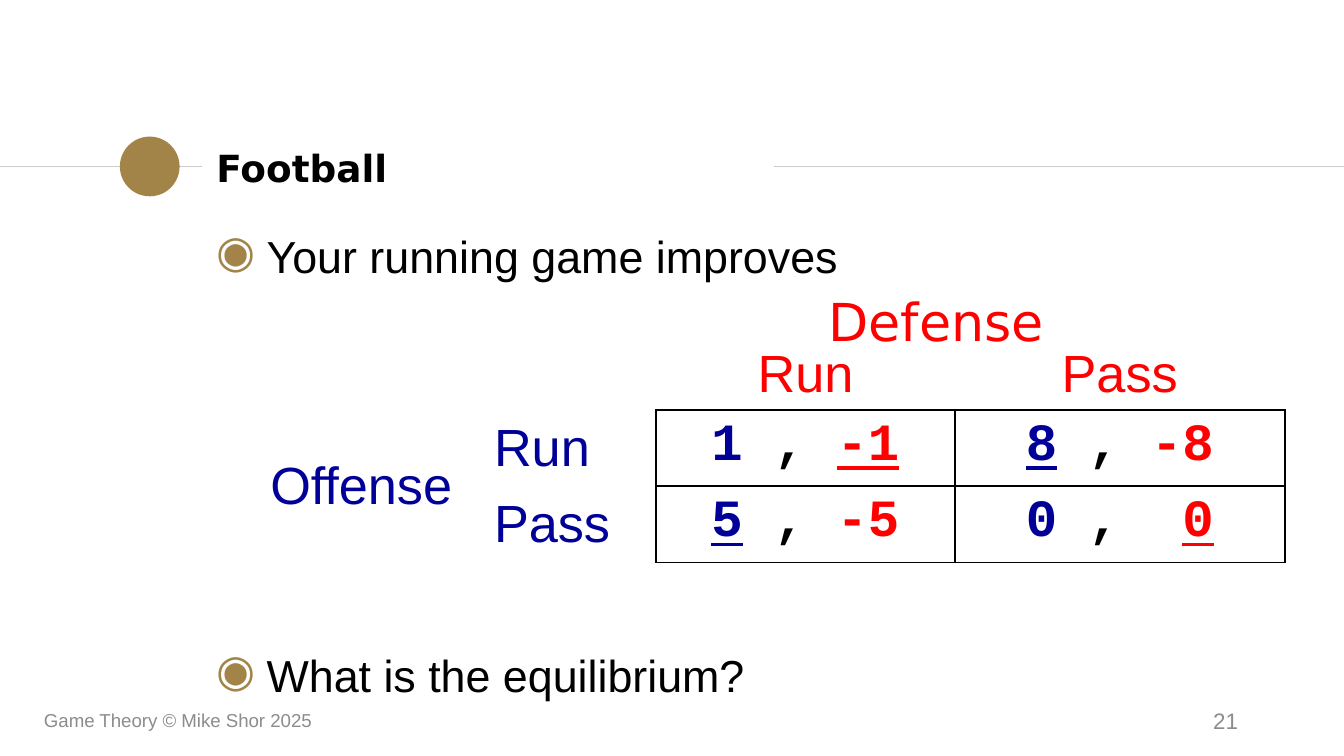
from lxml import etree
from pptx import Presentation
from pptx.dml.color import RGBColor
from pptx.enum.shapes import MSO_CONNECTOR, MSO_SHAPE
from pptx.enum.text import MSO_ANCHOR, PP_ALIGN
from pptx.oxml.ns import qn
from pptx.util import Pt

LEFT, CENTER, RIGHT = PP_ALIGN.LEFT, PP_ALIGN.CENTER, PP_ALIGN.RIGHT
TOP, MIDDLE, BOTTOM = MSO_ANCHOR.TOP, MSO_ANCHOR.MIDDLE, MSO_ANCHOR.BOTTOM
COLORS = {"gold": "A28448", "rule": "CCCCCC", "gray": "8C8C8C",
          "black": "000000", "offense": "000099", "defense": "FF0000"}


def write(para, text, size=28, color="black", font="Arial", bold=False,
          underline=False, align=LEFT):
    para.alignment = align
    span = para.add_run()
    span.text = text
    span.font.size = Pt(size)
    span.font.name = font
    span.font.bold = bold
    span.font.underline = underline
    span.font.color.rgb = RGBColor.from_string(COLORS[color])


def add_box(left, top, width, height, anchor=TOP, inset=None):
    """Add a wrapping text box and return its text frame."""
    frame = page.shapes.add_textbox(Pt(left), Pt(top), Pt(width), Pt(height)).text_frame
    frame.word_wrap = True
    frame.vertical_anchor = anchor
    if inset is not None:
        frame.margin_left = frame.margin_right = Pt(inset)
        frame.margin_top = frame.margin_bottom = Pt(inset)
    return frame


deck = Presentation()
deck.slide_width, deck.slide_height = Pt(720), Pt(405)
page = deck.slides.add_slide(deck.slide_layouts[5])

# Rule broken by the title, with a disc on its left part
for start, end in ((0, 108.5), (414.5, 720)):
    rule = page.shapes.add_connector(
        MSO_CONNECTOR.STRAIGHT, Pt(start), Pt(89.2), Pt(end), Pt(89.2))
    rule.line.color.rgb = RGBColor.from_string(COLORS["rule"])
    rule.line.width = Pt(0.75)
    etree.SubElement(rule._element.spPr, qn("a:effectLst"))

disc = page.shapes.add_shape(MSO_SHAPE.OVAL, Pt(64.2), Pt(73.2), Pt(32), Pt(32))
disc.shadow.inherit = False
disc.fill.solid()
disc.fill.fore_color.rgb = RGBColor.from_string(COLORS["gold"])
disc.line.fill.background()

title = page.shapes.title
title.left, title.top, title.width, title.height = Pt(108.7), Pt(72.7), Pt(305.5), Pt(34.5)
frame = title.text_frame
frame.vertical_anchor = MIDDLE
frame.margin_left = frame.margin_right = frame.margin_top = frame.margin_bottom = Pt(7.2)
write(frame.paragraphs[0], "Football", size=20, font="DejaVu Sans", bold=True)

# Footer, page number and the heading over the columns
footer = add_box(16.5, 375, 243.5, 21.6, anchor=MIDDLE)
write(footer.paragraphs[0], "Game Theory © Mike Shor 2025", size=10, color="gray")
number = add_box(508.3, 375, 162, 21.6, anchor=MIDDLE)
write(number.paragraphs[0], "21", size=12, color="gray", align=RIGHT)
heading = add_box(403.2, 151.2, 196.6, 41)
write(heading.paragraphs[0], "Defense", color="defense", font="DejaVu Sans", align=CENTER)

# Payoff table: each payoff is (value, underlined) for offense, then defense
MOVES = ["Run", "Pass"]
PAYOFFS = [
    [(("1", False), ("-1", True)), (("8", True), ("-8", False))],
    [(("5", True), ("-5", False)), (("0", False), ("0", True))],
]
COLUMN_WIDTHS = [151, 94, 160, 176.8]
ROW_HEIGHT = 40.8
SIDES = {"L": (0, -1), "R": (0, 1), "T": (-1, 0), "B": (1, 0)}
payoff_cells = {(row, column) for row in (1, 2) for column in (2, 3)}

table = page.shapes.add_table(
    3, 4, Pt(106.5), Pt(178.8), Pt(sum(COLUMN_WIDTHS)), Pt(3 * ROW_HEIGHT)).table
table.first_row = table.horz_banding = False
for column, width in zip(table.columns, COLUMN_WIDTHS):
    column.width = Pt(width)

for r, row in enumerate(table.rows):
    row.height = Pt(ROW_HEIGHT)
    for c, cell in enumerate(row.cells):
        properties = cell._tc.get_or_add_tcPr()
        for side, (down, across) in SIDES.items():
            border = etree.SubElement(properties, qn(f"a:ln{side}"), w=str(Pt(1)))
            if payoff_cells & {(r, c), (r + down, c + across)}:
                fill = etree.SubElement(border, qn("a:solidFill"))
                etree.SubElement(fill, qn("a:srgbClr"), val=COLORS["black"])
            else:
                etree.SubElement(border, qn("a:noFill"))
        cell.fill.background()

table.cell(1, 0).merge(table.cell(2, 0))
side_label = table.cell(1, 0)
side_label.vertical_anchor = MIDDLE
side_label.margin_left = Pt(38.3)
write(side_label.text_frame.paragraphs[0], "Offense", color="offense")

for i, move in enumerate(MOVES):
    column_label, row_label = table.cell(0, i + 2), table.cell(i + 1, 1)
    column_label.vertical_anchor, row_label.vertical_anchor = BOTTOM, MIDDLE
    write(column_label.text_frame.paragraphs[0], move, color="defense", align=CENTER)
    write(row_label.text_frame.paragraphs[0], move, color="offense")
    for j, ((offense, offense_best), (defense, defense_best)) in enumerate(PAYOFFS[i]):
        para = table.cell(i + 1, j + 2).text_frame.paragraphs[0]
        separator = " , " + " " * (2 - len(defense))
        for text, color, best in ((offense, "offense", offense_best),
                                  (separator, "black", False),
                                  (defense, "defense", defense_best)):
            write(para, text, color=color, font="Courier New", bold=True,
                  underline=best, align=CENTER)

# Bullets above and below the table
body = add_box(108.7, 118.8, 536.4, 244.8, inset=7.2)
for i, (text, gap) in enumerate((("Your running game improves", 0),
                                 ("What is the equilibrium?", 198.5))):
    para = body.add_paragraph() if i else body.paragraphs[0]
    write(para, text, size=24)
    para.line_spacing = 0.9
    para.space_before = Pt(gap)
    properties = para._p.get_or_add_pPr()
    properties.set("marL", str(Pt(27)))
    properties.set("indent", str(Pt(-27)))
    bullet_color = etree.SubElement(properties, qn("a:buClr"))
    etree.SubElement(bullet_color, qn("a:srgbClr"), val=COLORS["gold"])
    etree.SubElement(properties, qn("a:buChar"), char="◉")

deck.save("out.pptx")
